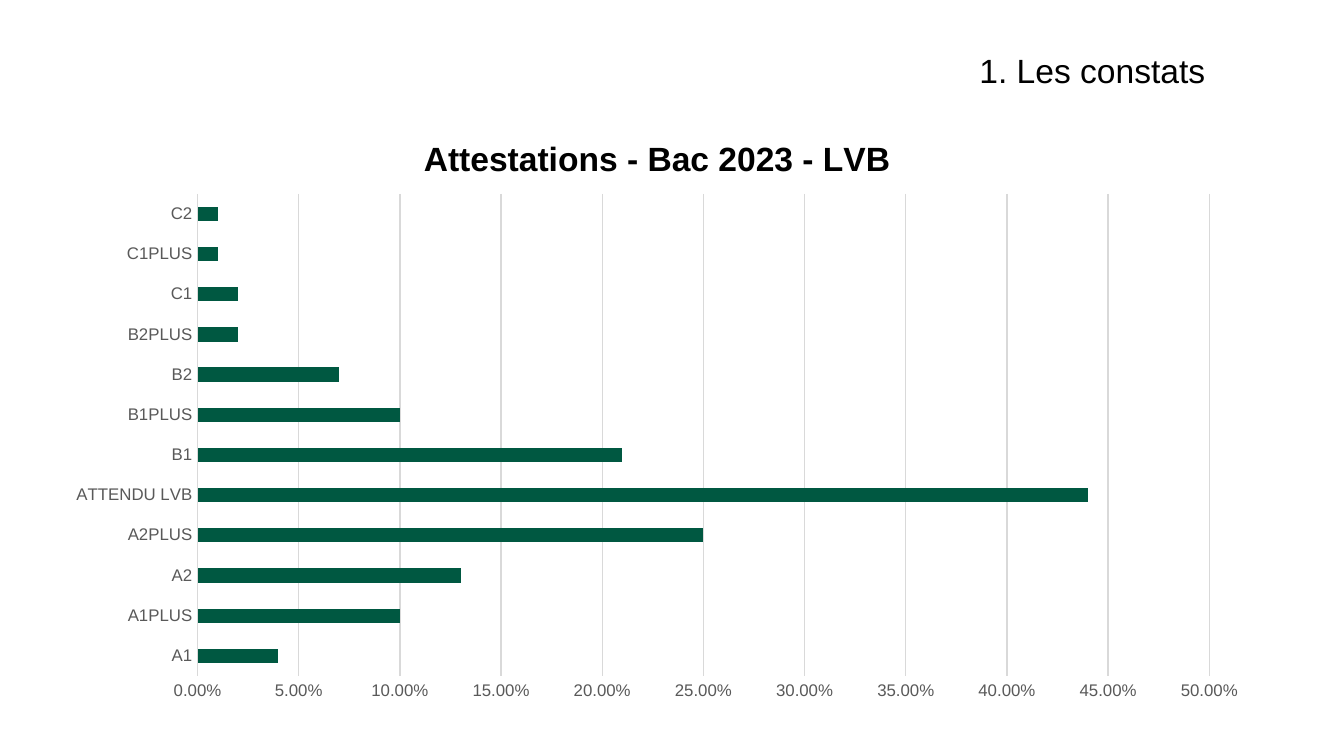
import pptx
import pptx.chart.data
import pptx.dml.color
import pptx.enum.chart
import pptx.oxml
import pptx.oxml.ns
import pptx.util

Cm, Pt = pptx.util.Cm, pptx.util.Pt
RGBColor = pptx.dml.color.RGBColor

# Content
HEADING = "1. Les constats"
CHART_TITLE = "Attestations - Bac 2023 - LVB"
RESULTS = [
    ("A1", 0.04), ("A1PLUS", 0.1), ("A2", 0.13), ("A2PLUS", 0.25),
    ("ATTENDU LVB", 0.44), ("B1", 0.21), ("B1PLUS", 0.1), ("B2", 0.07),
    ("B2PLUS", 0.02), ("C1", 0.02), ("C1PLUS", 0.01), ("C2", 0.01),
]

FONT = "Arial"
BLACK = RGBColor(0x00, 0x00, 0x00)
GREY = RGBColor(0x59, 0x59, 0x59)
LIGHT = RGBColor(0xD9, 0xD9, 0xD9)
GREEN = RGBColor(0x00, 0x58, 0x41)


def set_font(font, size, color, bold=False):
    font.name, font.size, font.bold = FONT, Pt(size), bold
    font.color.rgb = color


def set_line(line):
    line.color.rgb = LIGHT
    line.width = Pt(0.75)


def manual_layout(modes, **percents):
    """Chart layout placed in percent of the chart area."""
    values = modes | {k: v / 100 for k, v in percents.items()}
    tags = "".join(f'<c:{k} val="{v}"/>' for k, v in values.items())
    ns = pptx.oxml.ns.nsdecls("c")
    return pptx.oxml.parse_xml(
        f"<c:layout {ns}><c:manualLayout>{tags}</c:manualLayout></c:layout>")


prs = pptx.Presentation()
prs.slide_width, prs.slide_height = Cm(25.4), Cm(14.29)
s = prs.slides.add_slide(prs.slide_layouts[6])

# Bar chart
data = pptx.chart.data.CategoryChartData(number_format="0.00%")
data.categories = [level for level, share in RESULTS]
data.add_series("Series 1", [share for level, share in RESULTS])
chart = s.shapes.add_chart(
    pptx.enum.chart.XL_CHART_TYPE.BAR_CLUSTERED,
    Cm(0.99), Cm(2.11), Cm(22.86), Cm(11.35), data).chart
set_font(chart.font, 10, BLACK)
chart.has_legend = False

plot = chart.plots[0]
plot.gap_width = 182
plot.vary_by_categories = False
fill = plot.series[0].format.fill
fill.solid()
fill.fore_color.rgb = GREEN

# Chart title
EDGES = {"xMode": "edge", "yMode": "edge"}
chart.has_title = True
title = chart.chart_title
title.include_in_layout = False
p = title.text_frame.paragraphs[0]
p.text = CHART_TITLE
set_font(p.font, 18, BLACK, bold=True)
title._element.get_or_add_tx().addnext(manual_layout(EDGES, x=31, y=3.5))

# Axes
for axis in (chart.category_axis, chart.value_axis):
    axis.major_tick_mark = pptx.enum.chart.XL_TICK_MARK.NONE
    axis.minor_tick_mark = pptx.enum.chart.XL_TICK_MARK.NONE
    set_font(axis.tick_labels.font, 9, GREY)
set_line(chart.category_axis.format.line)

values = chart.value_axis
values.minimum_scale, values.maximum_scale, values.major_unit = 0, 0.5, 0.05
values.tick_labels.number_format = "0.00%"
values.tick_labels.number_format_is_linked = False
values.format.line.fill.background()
set_line(values.major_gridlines.format.line)

# Plot area
area = chart._chartSpace.chart.plotArea
for old in area.findall(pptx.oxml.ns.qn("c:layout")):
    area.remove(old)
area.insert(0, manual_layout({"layoutTarget": "inner"} | EDGES,
                             x=12, y=13.7, w=83.65, h=80.3))

# Heading
tf = s.shapes.add_textbox(Cm(18.26), Cm(0.81), Cm(6.2), Cm(1.02)).text_frame
tf.word_wrap = True
p = tf.paragraphs[0]
p.text = HEADING
set_font(p.font, 18, BLACK)

prs.save("out.pptx")
